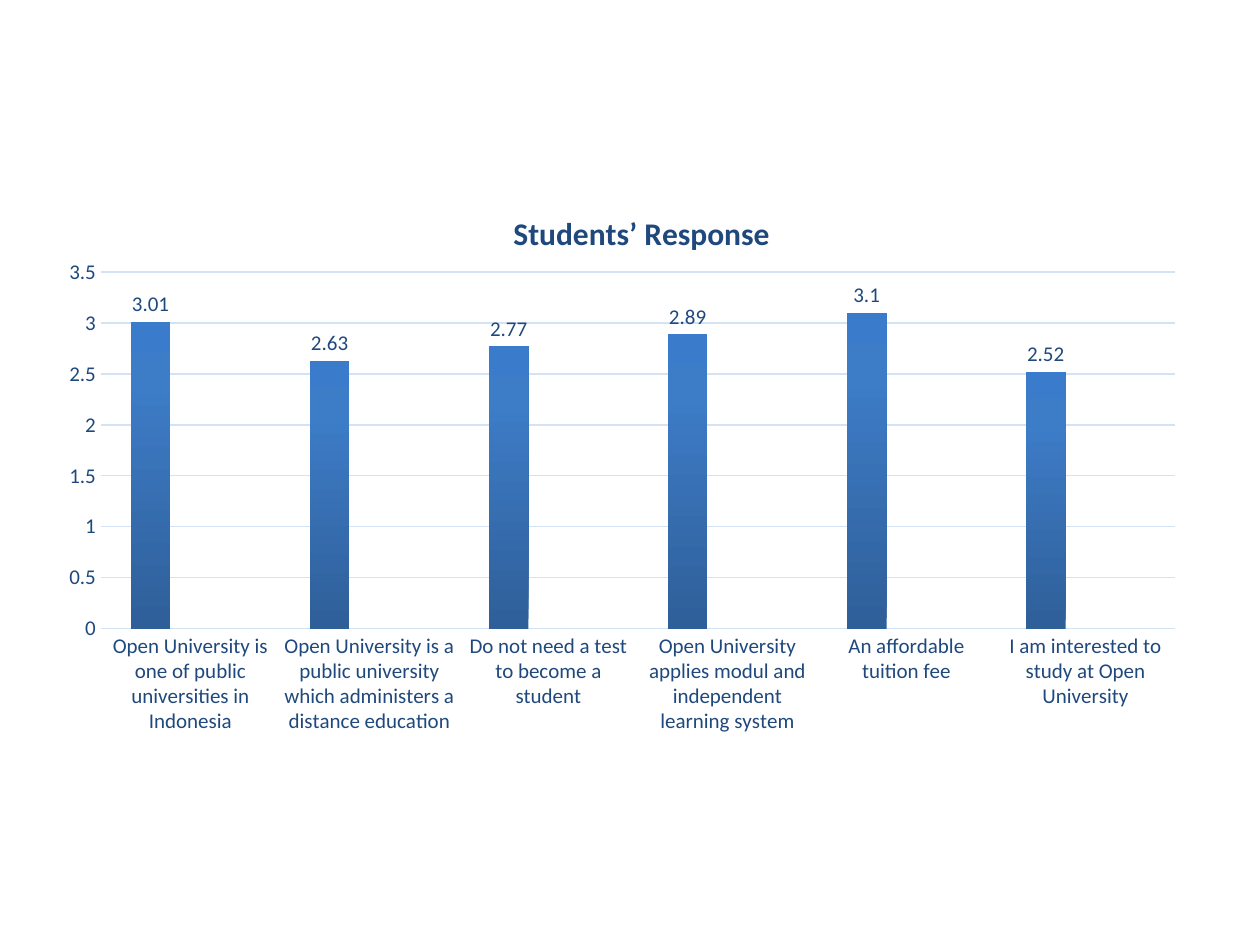
from copy import deepcopy
from dataclasses import dataclass

from lxml.etree import SubElement
from pptx import Presentation
from pptx.chart.data import CategoryChartData
from pptx.dml.color import RGBColor
from pptx.enum.chart import XL_CHART_TYPE as ChartType
from pptx.enum.chart import XL_LABEL_POSITION as LabelPosition
from pptx.enum.chart import XL_TICK_MARK as TickMark
from pptx.oxml.ns import qn
from pptx.util import Cm, Pt


@dataclass(frozen=True)
class Theme:
    font: str = "Calibri"
    text: str = "1F497D"
    grid: str = "D4E3F4"
    line_width: float = 0.75
    body_size: int = 12
    title_size: int = 18
    # Gradient colours from the foot of a bar to its top
    series: tuple = (
        ("2F5F99", "3D7CC7", "3A7CCB"),
        ("9C2F2D", "CB3E3A", "CE3B37"),
        ("779737", "9BC348", "9DC746"),
    )


THEME = Theme()
RESPONSES = {
    "Open University is one of public universities in Indonesia": 3.01,
    "Open University is a public university which administers a distance education": 2.63,
    "Do not need a test to become a student": 2.77,
    "Open University applies modul and independent learning system": 2.89,
    "An affordable tuition fee": 3.1,
    "I am interested to study at Open University": 2.52,
}


def style_font(font, size, bold=False):
    font.name = THEME.font
    font.size = Pt(size)
    font.bold = bold
    font.color.rgb = RGBColor.from_string(THEME.text)


def style_line(line):
    line.color.rgb = RGBColor.from_string(THEME.grid)
    line.width = Pt(THEME.line_width)


def set_layout(parent, position, **settings):
    """Give a chart part a manual layout, as fractions of the chart."""
    for old_layout in parent.findall(qn("c:layout")):
        parent.remove(old_layout)
    layout = SubElement(parent, qn("c:layout"))
    parent.insert(position, layout)
    manual = SubElement(layout, qn("c:manualLayout"))
    for name, value in settings.items():
        SubElement(manual, qn(f"c:{name}")).set("val", str(value))


def fill_gradient(series, colors):
    fill = series.format.fill
    fill.gradient()
    fill.gradient_angle = 90
    stop_list = series.format.fill.gradient_stops
    first_stop = next(series._element.iter(qn("a:gs")))
    first_stop.addnext(deepcopy(first_stop))
    stop_list = fill.gradient_stops
    for stop, position, color in zip(stop_list, (0, 0.8, 1), colors):
        stop.position = position
        stop.color.rgb = RGBColor.from_string(color)


def style_series(series, colors):
    fill_gradient(series, colors)
    series.invert_if_negative = False
    labels = series.data_labels
    labels.show_value = True
    labels.position = LabelPosition.OUTSIDE_END
    style_font(labels.font, THEME.body_size)


def style_axes(chart):
    for axis in (chart.category_axis, chart.value_axis):
        axis.major_tick_mark = axis.minor_tick_mark = TickMark.NONE
        style_font(axis.tick_labels.font, THEME.body_size)
    style_line(chart.category_axis.format.line)
    value_axis = chart.value_axis
    value_axis.minimum_scale, value_axis.maximum_scale = 0, 3.5
    value_axis.major_unit = 0.5
    value_axis.format.line.fill.background()
    style_line(value_axis.major_gridlines.format.line)


def add_title(chart, text):
    title = chart.chart_title
    title.include_in_layout = False
    paragraph = title.text_frame.paragraphs[0]
    paragraph.text = text
    style_font(paragraph.font, THEME.title_size, bold=True)
    set_layout(title._element, 1, xMode="edge", yMode="edge", x=0.4, y=0.04)


def add_response_chart(slide, left, top, width, height):
    data = CategoryChartData()
    data.categories = list(RESPONSES)
    data.add_series("Series 1", list(RESPONSES.values()))
    # The two empty series keep their room beside each bar
    for name in ("Series 2", "Series 3"):
        data.add_series(name, [None] * len(RESPONSES))

    chart = slide.shapes.add_chart(
        ChartType.COLUMN_CLUSTERED, left, top, width, height, data
    ).chart
    chart.has_legend = False
    style_font(chart.font, THEME.body_size)
    add_title(chart, "Students’ Response")
    style_axes(chart)

    plot = chart.plots[0]
    plot.gap_width = 150
    plot.overlap = 0
    plot.vary_by_categories = False
    for series, colors in zip(plot.series, THEME.series):
        style_series(series, colors)

    plot_area = next(chart._chartSpace.iter(qn("c:plotArea")))
    set_layout(plot_area, 0, layoutTarget="inner", xMode="edge", yMode="edge",
               x=0.034, y=0.14, w=0.966, h=0.536)


def main():
    presentation = Presentation()
    presentation.slide_width, presentation.slide_height = Cm(25.4), Cm(19.05)
    slide = presentation.slides.add_slide(presentation.slide_layouts[6])
    add_response_chart(slide, Cm(1.27), Cm(3.61), Cm(22.43), Cm(13.41))
    presentation.save("out.pptx")


if __name__ == "__main__":
    main()
